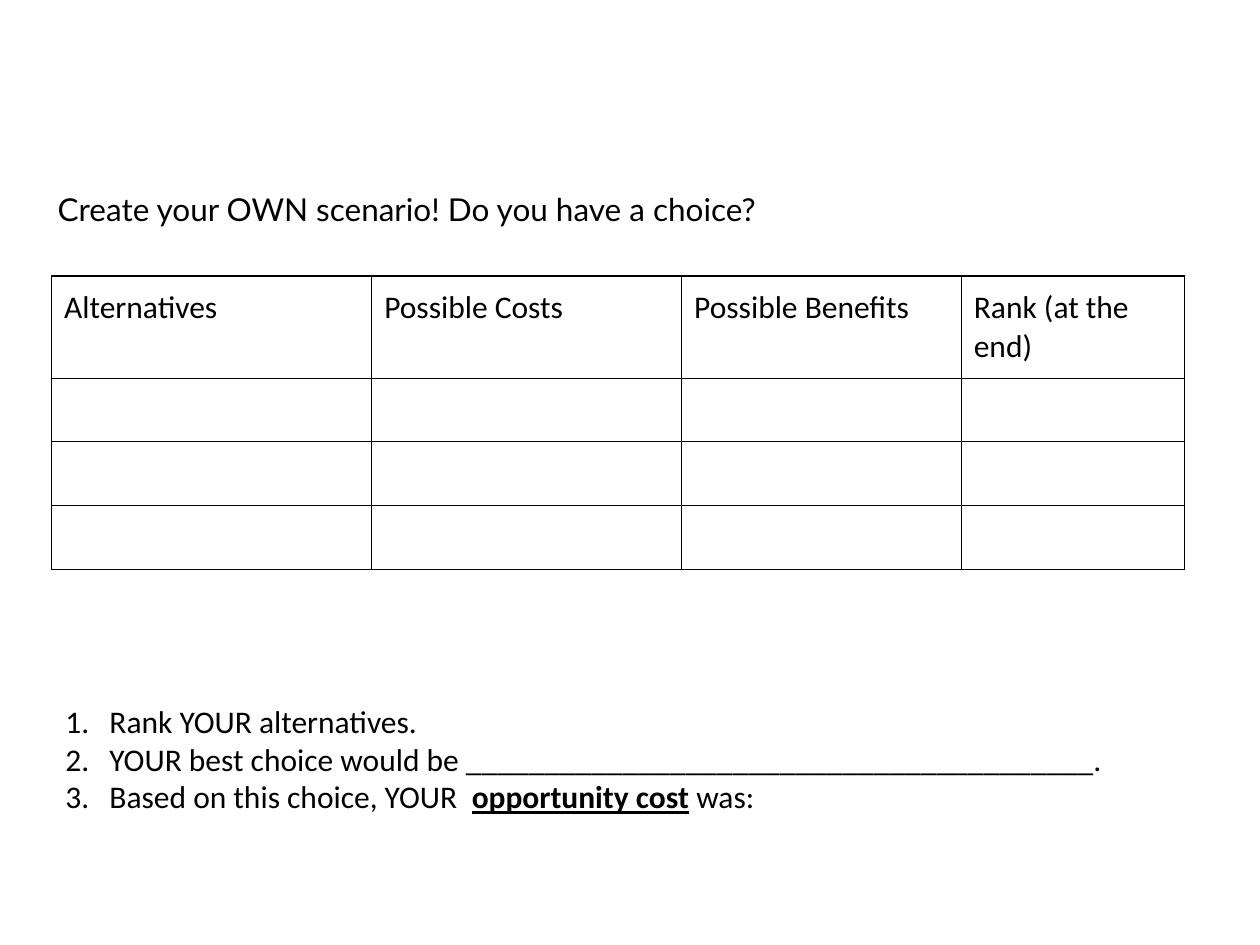
from lxml.etree import SubElement
from pptx import Presentation
from pptx.dml.color import RGBColor as RGB
from pptx.enum.text import MSO_AUTO_SIZE as AutoSize
from pptx.oxml.ns import qn
from pptx.util import Inches, Pt

COLORS = {"ink": "000000"}
HEADINGS = ["Alternatives", "Possible Costs", "Possible Benefits", "Rank (at the end)"]
COLUMN_WIDTHS = [2.54, 2.46, 2.22, 1.77]
ROW_COUNT, ROW_HEIGHT = 4, 0.5
EMPHASIS = {"bold": True, "underline": True}

# Each step is a list of (wording, extra format) pieces
STEPS = [
    [("Rank YOUR alternatives.", {})],
    [("YOUR best choice would be " + "_" * 40 + ".", {})],
    [("Based on this choice, YOUR  ", {}), ("opportunity cost", EMPHASIS), (" was:", {})],
]


def format_font(font, **values):
    for name, value in ({"size": Pt(18), "name": "Calibri"} | values).items():
        setattr(font, name, value)
    font.color.rgb = RGB.from_string(COLORS["ink"])


def add_text_frame(slide, left, top, width, height, **values):
    box = slide.shapes.add_textbox(*map(Inches, (left, top, width, height)))
    for name, value in ({"word_wrap": True} | values).items():
        setattr(box.text_frame, name, value)
    return box.text_frame


def add_prompt(slide, wording):
    margin = Inches(0.1)
    frame = add_text_frame(slide, 0.36, 1.41, 9, 3.71, margin_top=margin, margin_bottom=margin)
    run = frame.paragraphs[0].add_run()
    run.text = wording
    format_font(run.font, name="Lato")


def add_borders(cell):
    properties = cell._tc.get_or_add_tcPr()
    for side in ("lnL", "lnR", "lnT", "lnB"):
        line = SubElement(properties, qn(f"a:{side}"), w=str(Pt(0.75)))
        fill = SubElement(line, qn("a:solidFill"))
        SubElement(fill, qn("a:srgbClr"), val=COLORS["ink"])


def add_choice_table(slide):
    place = map(Inches, (0.41, 2.19, sum(COLUMN_WIDTHS), ROW_COUNT * ROW_HEIGHT))
    table = slide.shapes.add_table(ROW_COUNT, len(HEADINGS), *place).table
    table.first_row = table.horz_banding = False
    for column, width in zip(table.columns, COLUMN_WIDTHS):
        column.width = Inches(width)
    for row in table.rows:
        row.height = Inches(ROW_HEIGHT)
    for cell in table.iter_cells():
        for side in ("left", "right", "top", "bottom"):
            setattr(cell, f"margin_{side}", Inches(0.1))
        add_borders(cell)
        cell.fill.background()
        format_font(cell.text_frame.paragraphs[0].font)
    for cell, heading in zip(table.rows[0].cells, HEADINGS):
        run = cell.text_frame.paragraphs[0].add_run()
        run.text = heading
        format_font(run.font)


def add_steps(slide, steps):
    frame = add_text_frame(slide, 0.27, 5.52, 9.81, 1.01, auto_size=AutoSize.SHAPE_TO_FIT_TEXT)
    for index, pieces in enumerate(steps):
        step = frame.add_paragraph() if index else frame.paragraphs[0]
        properties = step._p.get_or_add_pPr()
        properties.set("marL", str(Inches(0.5)))
        properties.set("indent", str(Inches(-0.35)))
        SubElement(properties, qn("a:buFont"), typeface="+mj-lt")
        SubElement(properties, qn("a:buAutoNum"), type="arabicPeriod")
        for wording, extra in pieces:
            run = step.add_run()
            run.text = wording
            format_font(run.font, **extra)


def main():
    deck = Presentation()
    deck.slide_width, deck.slide_height = Inches(10), Inches(7.5)
    slide = deck.slides.add_slide(deck.slide_layouts[6])

    # Table of alternatives, with the prompt above it
    add_choice_table(slide)
    add_prompt(slide, "Create your OWN scenario! Do you have a choice?")

    # Numbered steps below
    add_steps(slide, STEPS)
    deck.save("out.pptx")


if __name__ == "__main__":
    main()
